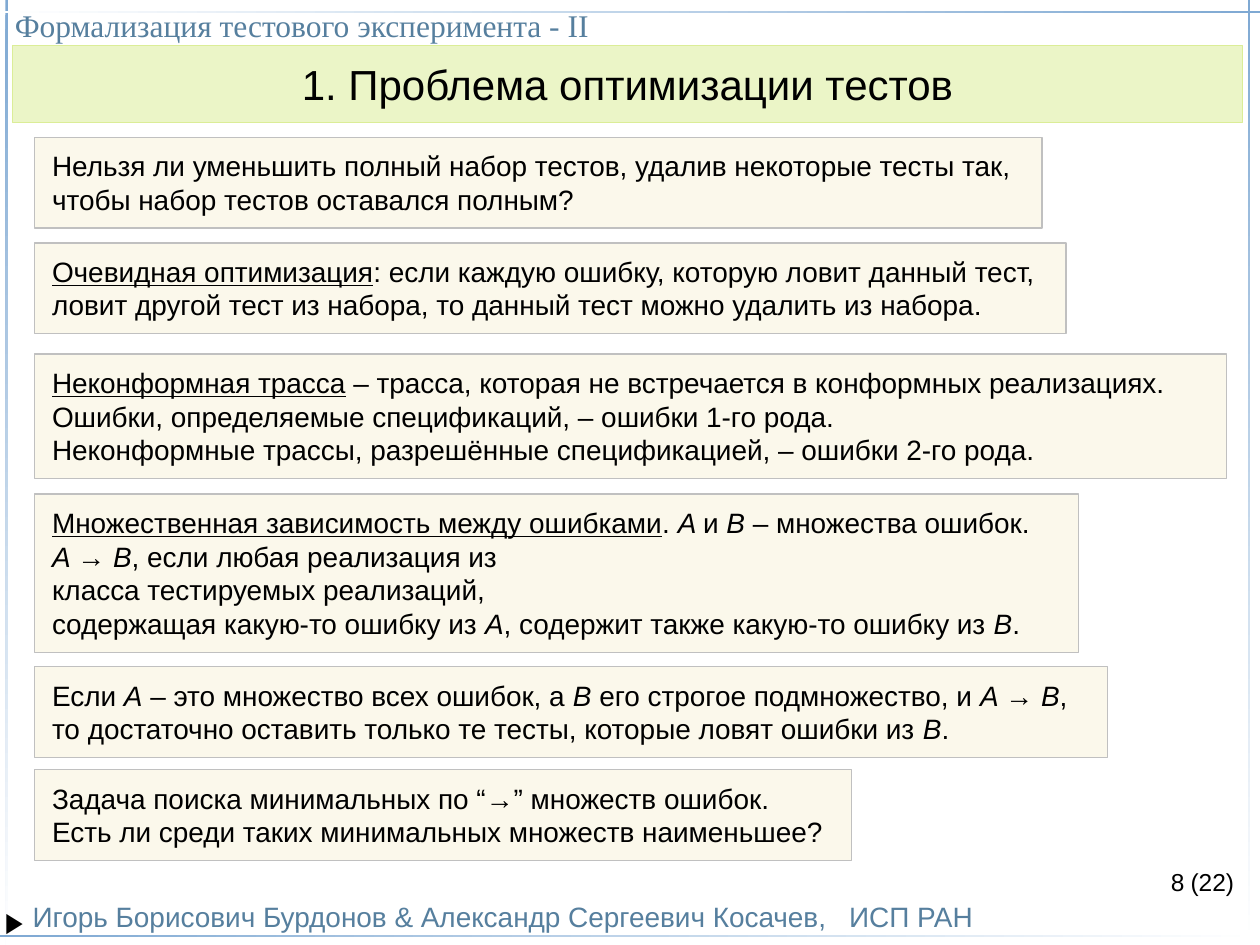
from pptx import Presentation
from pptx import util as u
from pptx.dml import color
from pptx.enum import shapes, text
from pptx.oxml import parse_xml
from pptx.oxml.ns import nsdecls

Cm = u.Cm
COLORS = {
    "rule": "7FA9D3", "paper": "FFFFFF", "caption": "567F9E", "ink": "000000",
    "title_fill": "EBF5C7", "title_line": "DBED97",
    "note_fill": "FBF8EB", "note_line": "C0C0C0",
}
PAGE_W, PAGE_H = 25.4, 19.05
RULE = 0.05
LINE_H, NOTE_PADDING = 0.68, 0.47

NOTES = [
    (2.77, 20.32, [
        [("Нельзя ли уменьшить полный набор тестов, удалив некоторые тесты так,", "")],
        [("чтобы набор тестов оставался полным?", "")],
    ]),
    (4.9, 20.8, [
        [("Очевидная оптимизация", "u"),
         (": если каждую ошибку, которую ловит данный тест,", "")],
        [("ловит другой тест из набора, то данный тест можно удалить из набора.", "")],
    ]),
    (7.14, 24.03, [
        [("Неконформная трасса", "u"), (" ", "bi"),
         ("– трасса, которая не встречается в конформных реализациях.", "")],
        [("Ошибки, определяемые спецификаций, – ошибки 1-го рода.", "")],
        [("Неконформные трассы, разрешённые спецификацией, – ошибки 2-го рода.", "")],
    ]),
    (9.96, 21.06, [
        [("Множественная зависимость между ошибками", "u"), (". ", ""), ("A ", "i"),
         ("и ", ""), ("B", "i"), (" – множества ошибок.", "")],
        [("A ", "i"), ("→ ", ""), ("B", "i"), (", если любая реализация из", "")],
        [("класса тестируемых реализаций,", "")],
        [("содержащая какую-то ошибку из ", ""), ("A", "i"),
         (", содержит также какую-то ошибку из ", ""), ("B", "i"), (".", "")],
    ]),
    (13.44, 21.64, [
        [("Если ", ""), ("A", "i"), (" – это множество всех ошибок, а ", ""), ("B", "i"),
         (" его строгое подмножество, и ", ""), ("A ", "i"), ("→ ", ""), ("B", "i"),
         (",", "")],
        [("то достаточно оставить только те тесты, которые ловят ошибки из ", ""),
         ("B", "i"), (".", "")],
    ]),
    (15.52, 16.48, [
        [("Задача поиска минимальных по “→” множеств ошибок.", "")],
        [("Есть ли среди таких минимальных множеств наименьшее?", "")],
    ]),
]


def rgb(name):
    return color.RGBColor.from_string(COLORS[name])


def add_run(paragraph, wording, size, ink="ink", face="Arial", style=""):
    run = paragraph.add_run()
    run.text = wording
    run.font.size = u.Pt(size)
    run.font.name = face
    run.font.color.rgb = rgb(ink)
    run.font.underline = "u" in style
    run.font.italic = "i" in style
    run.font.bold = "b" in style


def set_insets(frame, across, down):
    frame.margin_left = frame.margin_right = Cm(across)
    frame.margin_top = frame.margin_bottom = Cm(down)


def paint(panel, fill, line):
    panel.fill.solid()
    panel.fill.fore_color.rgb = rgb(fill)
    panel.line.color.rgb = rgb(line)
    panel.line.width = u.Pt(0.75)


def add_label(slide, box, wording, size, ink="ink", face="Arial",
              align=text.PP_ALIGN.LEFT, tab=None):
    frame = slide.shapes.add_textbox(*map(Cm, box)).text_frame
    frame.word_wrap = True
    set_insets(frame, 0, 0)
    paragraph = frame.paragraphs[0]
    paragraph.alignment = align
    if tab:
        paragraph._p.get_or_add_pPr().append(parse_xml(
            f'<a:tabLst {nsdecls("a")}><a:tab pos="{Cm(tab)}" algn="l"/></a:tabLst>'))
    add_run(paragraph, wording, size, ink, face)


def add_rule(slide, box, angle, ends=("rule", "paper")):
    rule = slide.shapes.add_shape(shapes.MSO_SHAPE.RECTANGLE, *map(Cm, box))
    rule.shadow.inherit = False
    rule.line.fill.background()
    rule.fill.gradient()
    rule.fill.gradient_angle = angle
    for stop, end in zip(rule.fill.gradient_stops, ends):
        stop.color.rgb = rgb(end)


def add_frame(slide, box):
    left, top, width, height = box
    for x in (0.11, 25.15):
        add_rule(slide, (left + x, top, RULE, height), 270)
    add_rule(slide, (left, top + 0.22, width, RULE), 0, ("paper", "rule"))
    add_rule(slide, (left, top + 18.85, width, RULE), 0)


def add_header(slide, box):
    left, top, width, height = box
    add_label(slide, (left + 0.05, top, width, 0.76),
              "Формализация тестового эксперимента - II", 18, "caption", "Times New Roman")
    title = slide.shapes.title
    title.left, title.top = Cm(left), Cm(top + 0.79)
    title.width, title.height = Cm(width), Cm(height - 0.79)
    paint(title, "title_fill", "title_line")
    frame = title.text_frame
    set_insets(frame, 0, 0.25)
    frame.vertical_anchor = text.MSO_ANCHOR.MIDDLE
    frame.auto_size = text.MSO_AUTO_SIZE.NONE
    frame.paragraphs[0].alignment = text.PP_ALIGN.CENTER
    add_run(frame.paragraphs[0], "1. Проблема оптимизации тестов", 24)


def add_note(slide, box, lines):
    note = slide.shapes.add_shape(shapes.MSO_SHAPE.RECTANGLE, *map(Cm, box))
    note.shadow.inherit = False
    paint(note, "note_fill", "note_line")
    frame = note.text_frame
    set_insets(frame, 0.36, 0.23)
    frame.word_wrap = False
    frame.auto_size = text.MSO_AUTO_SIZE.SHAPE_TO_FIT_TEXT
    frame.vertical_anchor = text.MSO_ANCHOR.TOP
    for index, line in enumerate(lines):
        paragraph = frame.add_paragraph() if index else frame.paragraphs[0]
        paragraph.alignment = text.PP_ALIGN.LEFT
        for wording, style in line:
            add_run(paragraph, wording, 16, style=style)


def add_footer(slide, box):
    left, top, width, height = box
    add_label(slide, (left + 21.5, top, 2.28, 0.6), "8", 14, align=text.PP_ALIGN.RIGHT)
    add_label(slide, (left + 23.9, top, 1.1, 0.6), "(22)", 14)
    add_label(slide, (left, top + 0.76, 0.5, 0.69), "▶", 16, face="Times New Roman")
    add_label(slide, (left + 0.56, top + 0.66, 21, 0.69),
              "Игорь Борисович Бурдонов & Александр Сергеевич Косачев,\tИСП РАН",
              16, "caption", tab=16.46)


def main():
    deck = Presentation()
    deck.slide_width, deck.slide_height = Cm(PAGE_W), Cm(PAGE_H)
    slide = deck.slides.add_slide(deck.slide_layouts[5])
    add_frame(slide, (0, 0, PAGE_W, PAGE_H))
    add_header(slide, (0.25, 0.13, 24.8, 2.34))
    for top, width, lines in NOTES:
        add_note(slide, (0.69, top, width, NOTE_PADDING + LINE_H * len(lines)), lines)
    add_footer(slide, (0.1, 17.48, 25, 1.4))
    deck.save("out.pptx")


if __name__ == "__main__":
    main()
